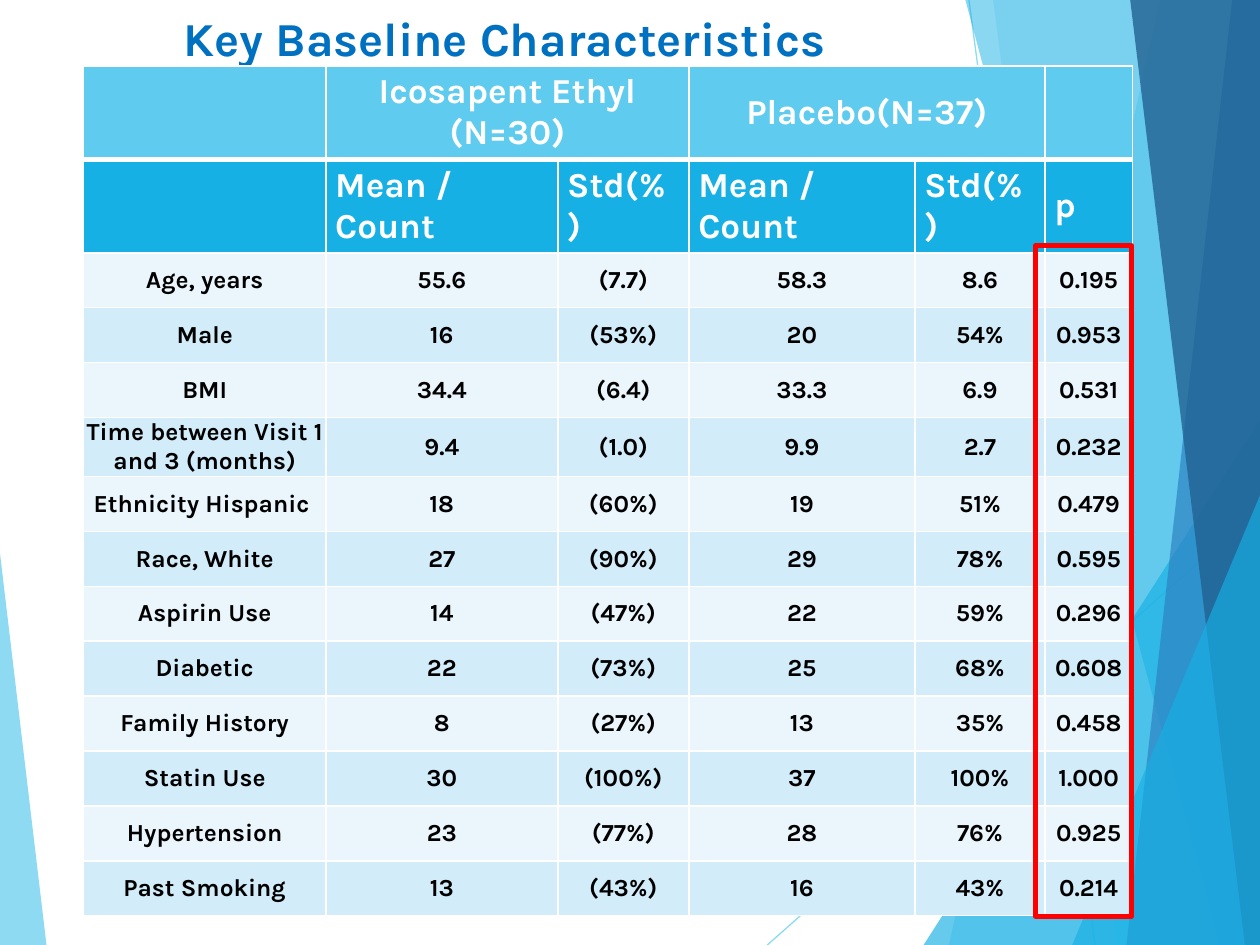
from dataclasses import dataclass

from lxml.etree import SubElement
from pptx import Presentation
from pptx.dml.color import RGBColor
from pptx.enum.shapes import MSO_CONNECTOR, MSO_SHAPE
from pptx.enum.text import MSO_ANCHOR, PP_ALIGN
from pptx.oxml.ns import qn
from pptx.util import Pt

FONT = "Karla"
COLORS = {
    "white": "FFFFFF", "black": "000000", "title": "0070C0", "highlight": "FF0000",
    "sky": "5FCBEF", "azure": "17B0E4", "blue": "2E83C3", "navy": "226292",
    "band_light": "EAF6FC", "band_dark": "D2ECF9",
}
PAGE_WIDTH, PAGE_HEIGHT = 720, 540
BLEED_TOP = -0.6
COLUMN_WIDTHS = [138.4, 132.6, 74.9, 129.2, 74.3, 50]
HEADER_HEIGHT, BODY_HEIGHT = 36, 31.4
HEADERS = [
    ["", "Icosapent Ethyl (N=30)", "", "Placebo(N=37)", "", ""],
    ["", "Mean / Count", "Std(%)", "Mean / Count", "Std(%)", "p"],
]
BODY = [
    ["Age, years", "55.6", "(7.7)", "58.3", "8.6", "0.195"],
    ["Male", "16", "(53%)", "20", "54%", "0.953"],
    ["BMI", "34.4", "(6.4)", "33.3", "6.9", "0.531"],
    ["Time between Visit 1 and 3 (months)", "9.4", "(1.0)", "9.9", "2.7", "0.232"],
    ["Ethnicity Hispanic ", "18", "(60%)", "19", "51%", "0.479"],
    ["Race, White", "27", "(90%)", "29", "78%", "0.595"],
    ["Aspirin Use", "14", "(47%)", "22", "59%", "0.296"],
    ["Diabetic", "22", "(73%)", "25", "68%", "0.608"],
    ["Family History", "8", "(27%)", "13", "35%", "0.458"],
    ["Statin Use", "30", "(100%)", "37", "100%", "1.000"],
    ["Hypertension", "23", "(77%)", "28", "76%", "0.925"],
    ["Past Smoking", "13", "(43%)", "16", "43%", "0.214"],
]


@dataclass
class Ray:
    start: tuple[float, float]
    end: tuple[float, float]


@dataclass
class Ribbon:
    top_x: float
    bottom_x: float
    color: str
    opacity: int


@dataclass
class Wedge:
    left: float
    top: float
    width: float
    apex: float
    color: str
    opacity: int


@dataclass
class CellStyle:
    fill: str
    color: str
    size: float
    align: PP_ALIGN
    side_inset: float
    end_inset: float
    top_border: float
    bottom_border: float


BACKDROP = [
    Ray((553.7, 0), (625.7, 540)),
    Ray((720, 290.2), (438.5, 540)),
    Ribbon(663.1, 542.2, "sky", 36),
    Ribbon(567.4, 638.6, "sky", 20),
    Wedge(527.8, 239.8, 192.2, 1, "azure", 66),
    Ribbon(551.5, 697, "azure", 50),
    Ribbon(704.2, 643.7, "blue", 70),
    Ribbon(645.8, 711.4, "navy", 80),
    Wedge(612.7, 283, 107.3, 1, "azure", 66),
    Wedge(0, 316.1, 26.6, 0, "sky", 70),
]


def rgb(name: str) -> RGBColor:
    return RGBColor.from_string(COLORS[name])


def set_opacity(element, percent: int) -> None:
    color = next(element.iter(qn("a:srgbClr")))
    SubElement(color, qn("a:alpha"), val=str(percent * 1000))


def paint(shape, color: str, opacity: int) -> None:
    shape.shadow.inherit = False
    shape.fill.solid()
    shape.fill.fore_color.rgb = rgb(color)
    set_opacity(shape.fill._xPr, opacity)
    shape.line.fill.background()


def draw_ray(page, ray: Ray) -> None:
    line = page.shapes.add_connector(
        MSO_CONNECTOR.STRAIGHT, *map(Pt, ray.start), *map(Pt, ray.end))
    line.line.width = Pt(0.75)
    line.line.color.rgb = rgb("sky")
    properties = line._element.spPr
    set_opacity(properties, 70)
    SubElement(properties, qn("a:effectLst"))


def draw_ribbon(page, ribbon: Ribbon) -> None:
    builder = page.shapes.build_freeform(Pt(ribbon.top_x), Pt(BLEED_TOP))
    corners = [(PAGE_WIDTH, BLEED_TOP), (PAGE_WIDTH, PAGE_HEIGHT),
               (ribbon.bottom_x, PAGE_HEIGHT)]
    builder.add_line_segments([(Pt(x), Pt(y)) for x, y in corners], close=True)
    paint(builder.convert_to_shape(), ribbon.color, ribbon.opacity)


def draw_wedge(page, wedge: Wedge) -> None:
    shape = page.shapes.add_shape(
        MSO_SHAPE.ISOSCELES_TRIANGLE, Pt(wedge.left), Pt(wedge.top),
        Pt(wedge.width), Pt(PAGE_HEIGHT - wedge.top))
    shape.adjustments[0] = wedge.apex
    paint(shape, wedge.color, wedge.opacity)


def add_span(para, text: str, size: float, color: str) -> None:
    span = para.add_run()
    span.text = text
    span.font.name = FONT
    span.font.size = Pt(size)
    span.font.bold = True
    span.font.color.rgb = rgb(color)


def draw_title(page) -> None:
    box = page.shapes.add_textbox(Pt(97.9), Pt(0), Pt(685.4), Pt(53.3))
    box.text_frame.word_wrap = True
    box.text_frame.margin_top = Pt(5.4)
    add_span(box.text_frame.paragraphs[0], "Key Baseline Characteristics", 27, "title")


def style_for(row: int) -> CellStyle:
    if row == 0:
        return CellStyle("sky", "white", 20, PP_ALIGN.CENTER, 5.4, 2.7, 1, 3)
    if row == 1:
        return CellStyle("azure", "white", 20, PP_ALIGN.LEFT, 5.4, 2.7, 3, 1)
    band = "band_dark" if row % 2 else "band_light"
    return CellStyle(band, "black", 14, PP_ALIGN.CENTER, 0, 0, 1, 1)


def fill_cell(cell, text: str, style: CellStyle) -> None:
    borders = {"lnL": 1, "lnR": 1, "lnT": style.top_border, "lnB": style.bottom_border}
    properties = cell._tc.get_or_add_tcPr()
    for tag, width in borders.items():
        border = SubElement(properties, qn(f"a:{tag}"), w=str(Pt(width)))
        solid = SubElement(border, qn("a:solidFill"))
        SubElement(solid, qn("a:srgbClr"), val=COLORS["white"])
    cell.fill.solid()
    cell.fill.fore_color.rgb = rgb(style.fill)
    cell.vertical_anchor = MSO_ANCHOR.MIDDLE
    cell.margin_left = cell.margin_right = Pt(style.side_inset)
    cell.margin_top = cell.margin_bottom = Pt(style.end_inset)
    if text:
        para = cell.text_frame.paragraphs[0]
        para.alignment = style.align
        add_span(para, text, style.size, style.color)


def draw_table(page) -> None:
    rows = HEADERS + BODY
    table = page.shapes.add_table(
        len(rows), len(COLUMN_WIDTHS), Pt(47.8), Pt(37.6),
        Pt(sum(COLUMN_WIDTHS)), Pt(486)).table
    table.first_row = table.horz_banding = False
    for column, width in zip(table.columns, COLUMN_WIDTHS):
        column.width = Pt(width)
    for index, texts in enumerate(rows):
        table.rows[index].height = Pt(HEADER_HEIGHT if index < len(HEADERS) else BODY_HEIGHT)
        for column, text in enumerate(texts):
            fill_cell(table.cell(index, column), text, style_for(index))
    for column in (1, 3):
        table.cell(0, column).merge(table.cell(0, column + 1))


def draw_highlight(page) -> None:
    frame = page.shapes.add_shape(
        MSO_SHAPE.RECTANGLE, Pt(591.8), Pt(140.4), Pt(54.9), Pt(383.2))
    frame.shadow.inherit = False
    frame.fill.background()
    frame.line.color.rgb = rgb("highlight")
    frame.line.width = Pt(2.75)


def main() -> None:
    deck = Presentation()
    deck.slide_width, deck.slide_height = Pt(PAGE_WIDTH), Pt(PAGE_HEIGHT)
    page = deck.slides.add_slide(deck.slide_layouts[6])
    painters = {Ray: draw_ray, Ribbon: draw_ribbon, Wedge: draw_wedge}
    for part in BACKDROP:
        painters[type(part)](page, part)
    draw_title(page)
    draw_table(page)
    draw_highlight(page)
    deck.save("out.pptx")


if __name__ == "__main__":
    main()
